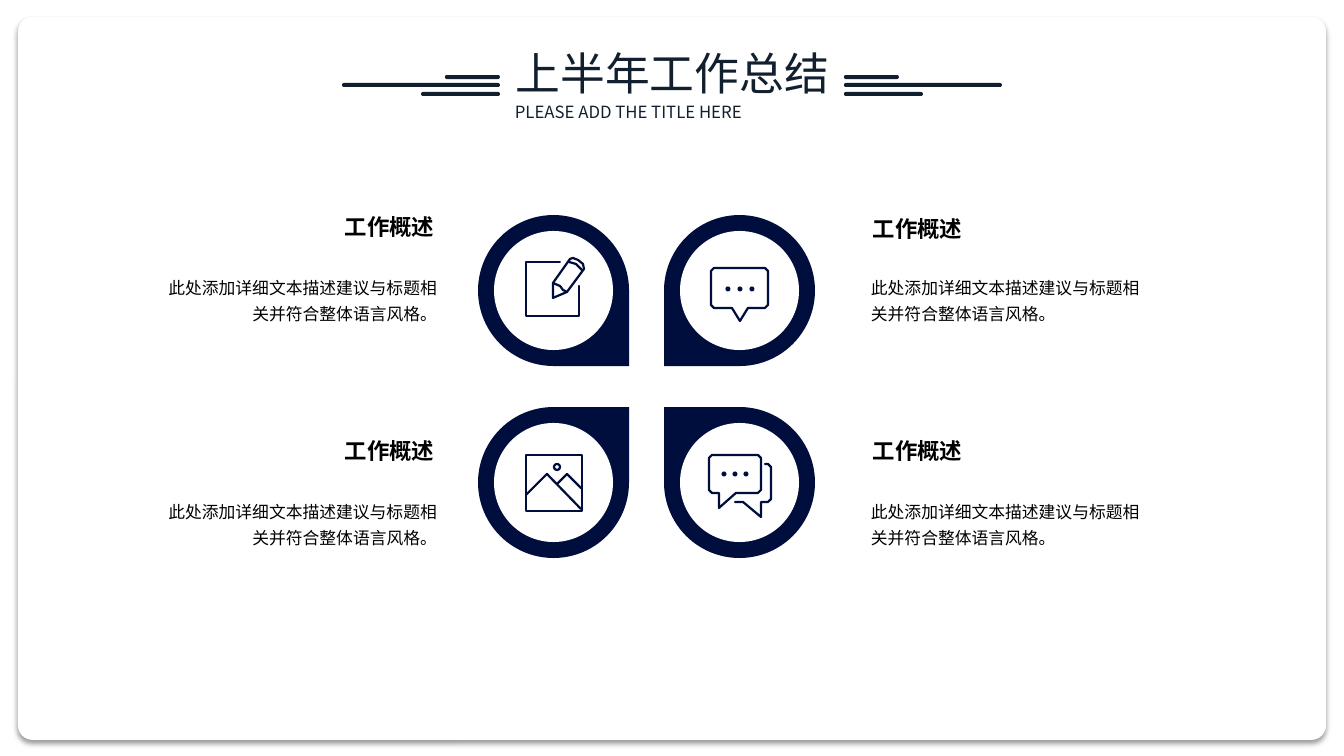
from dataclasses import dataclass

from lxml import etree
from pptx import Presentation
from pptx.dml.color import RGBColor
from pptx.enum.shapes import MSO_SHAPE
from pptx.enum.text import MSO_ANCHOR, MSO_AUTO_SIZE, PP_ALIGN
from pptx.oxml.ns import qn
from pptx.util import Emu, Pt

EMU_PER_PX = 914400 / 100.8
FONT = "Noto Sans CJK SC"
NAVY, INK, WHITE, BLACK = "000E3D", "121F2F", "FFFFFF", "000000"
LEFT, RIGHT, CENTER = PP_ALIGN.LEFT, PP_ALIGN.RIGHT, PP_ALIGN.CENTER
JUSTIFY = PP_ALIGN.JUSTIFY
TOP = MSO_ANCHOR.TOP
FIT_SHAPE = MSO_AUTO_SIZE.SHAPE_TO_FIT_TEXT
OVAL, TEAR, ROUNDED = MSO_SHAPE.OVAL, MSO_SHAPE.TEAR, MSO_SHAPE.ROUNDED_RECTANGLE

HEADING = "工作概述"
DETAIL = "此处添加详细文本描述建议与标题相关并符合整体语言风格。"
BADGE_SIZE, RING_WIDTH = 151, 16
DOT_SIZE = 5
BAR_HEIGHT = 4

Point = tuple[int, int]


@dataclass
class Stroke:
    points: list[Point]
    closed: bool = False


@dataclass
class Icon:
    strokes: list[Stroke]
    dots: list[Point]
    rings: list[Point]


@dataclass
class Topic:
    badge: Point
    rotation: int
    icon: Icon
    heading: Point
    detail: Point
    align: PP_ALIGN


@dataclass
class Bar:
    top: int
    length: int


def px(value: float) -> Emu:
    return Emu(round(value * EMU_PER_PX))


def color(value: str) -> RGBColor:
    return RGBColor.from_string(value)


def add_filled(shapes, kind, left: int, top: int, width: int, height: int, fill: str):
    shape = shapes.add_shape(kind, px(left), px(top), px(width), px(height))
    shape.shadow.inherit = False
    shape.fill.solid()
    shape.fill.fore_color.rgb = color(fill)
    shape.line.fill.background()
    return shape


def outline(shape) -> None:
    """Give an icon part a thin line with round ends and joins, and no fill."""
    shape.shadow.inherit = False
    shape.fill.background()
    shape.line.color.rgb = color(NAVY)
    shape.line.width = Pt(1.6)
    line = shape.element.spPr.find(qn("a:ln"))
    line.set("cap", "rnd")
    etree.SubElement(line, qn("a:round"))


def bubble(left: int, top: int, right: int, bottom: int, tail: list[Point]) -> Stroke:
    """Speech bubble with cut corners; the tail runs from right to left."""
    cut = 3
    return Stroke([
        (left + cut, top), (right - cut, top), (right, top + cut),
        (right, bottom - cut), (right - cut, bottom), *tail,
        (left + cut, bottom), (left, bottom - cut), (left, top + cut),
    ], closed=True)


def add_icon(shapes, icon: Icon) -> None:
    for stroke in icon.strokes:
        first, *rest = [(px(x), px(y)) for x, y in stroke.points]
        builder = shapes.build_freeform(*first)
        builder.add_line_segments(rest, close=stroke.closed)
        outline(builder.convert_to_shape())
    half = DOT_SIZE / 2
    for x, y in icon.dots:
        add_filled(shapes, OVAL, x - half, y - half, DOT_SIZE, DOT_SIZE, NAVY)
    for x, y in icon.rings:
        outline(shapes.add_shape(OVAL, px(x - 3), px(y - 3), px(6), px(6)))


def write(shape, text: str, size: int, ink: str, align, bold=False, spacing=1.0, wrap=True):
    frame = shape.text_frame
    frame_format = {"word_wrap": wrap, "auto_size": FIT_SHAPE, "vertical_anchor": TOP}
    for name, value in frame_format.items():
        setattr(frame, name, value)
    paragraph = frame.paragraphs[0]
    paragraph.alignment = align
    paragraph.line_spacing = spacing
    run = paragraph.add_run()
    run.text = text
    run.font.color.rgb = color(ink)
    for name, value in {"name": FONT, "size": Pt(size), "bold": bold}.items():
        setattr(run.font, name, value)
    latin = run.font._element.find(qn("a:latin"))
    east_asian = etree.Element(qn("a:ea"), typeface=FONT)
    latin.addnext(east_asian)


def add_text(slide, position: Point, width: int, height: int, text: str, **text_format):
    left, top = position
    box = slide.shapes.add_textbox(px(left), px(top), px(width), px(height))
    write(box, text, **text_format)


def add_panel(slide) -> None:
    panel = add_filled(slide.shapes, ROUNDED, 18, 17, 1308, 723, WHITE)
    panel.adjustments[0] = 0.02
    effects = panel.element.spPr.find(qn("a:effectLst"))
    shadow = etree.SubElement(effects, qn("a:outerShdw"), blurRad=str(Pt(4)),
                              dist=str(Pt(3)), dir="5400000", algn="t", rotWithShape="0")
    shade = etree.SubElement(shadow, qn("a:srgbClr"), val=BLACK)
    etree.SubElement(shade, qn("a:alpha"), val="40000")
    slide.shapes.title.element.addprevious(panel.element)


def add_title(slide) -> None:
    title = slide.shapes.title
    frame = {"left": 501, "top": 41, "width": 343, "height": 65}
    for name, value in frame.items():
        setattr(title, name, px(value))
    write(title, "上半年工作总结", size=32, ink=INK, align=CENTER)
    add_text(slide, (505, 97), 334, 30, "PLEASE ADD THE TITLE HERE",
             size=12, ink=INK, align=JUSTIFY)
    for bar in (Bar(83, 158), Bar(75, 55), Bar(92, 79)):
        for left in (500 - bar.length, 844):
            shape = add_filled(slide.shapes, ROUNDED, left, bar.top, bar.length, BAR_HEIGHT, INK)
            shape.adjustments[0] = 0.5


def add_topic(slide, topic: Topic) -> None:
    left, top = topic.badge
    shapes = slide.shapes.add_group_shape().shapes
    drop = add_filled(shapes, TEAR, left, top, BADGE_SIZE, BADGE_SIZE, NAVY)
    drop.rotation = topic.rotation
    inner = BADGE_SIZE - 2 * RING_WIDTH
    add_filled(shapes, OVAL, left + RING_WIDTH, top + RING_WIDTH, inner, inner, WHITE)
    add_icon(shapes, topic.icon)
    add_text(slide, topic.heading, 111, 37, HEADING,
             size=16, ink=BLACK, align=RIGHT, bold=True, wrap=False)
    add_text(slide, topic.detail, 291, 64, DETAIL,
             size=12, ink=BLACK, align=topic.align, spacing=1.3)


NOTE = Icon([
    Stroke([(560, 262), (526, 262), (526, 316), (579, 316), (579, 286)]),
    Stroke([(553, 298), (553, 283), (570, 259), (573, 258), (578, 260),
            (583, 264), (584, 269), (567, 292)], closed=True),
    Stroke([(569, 262), (576, 264), (582, 270)]),
    Stroke([(553, 283), (560, 286), (563, 290), (567, 292)]),
], [], [])
CHAT = Icon([bubble(711, 268, 768, 308, [(748, 308), (740, 321), (732, 308)])],
            [(x, 289) for x in (728, 740, 752)], [])
PHOTO = Icon([
    Stroke([(526, 455), (582, 455), (582, 511), (526, 511)], closed=True),
    Stroke([(526, 495), (547, 474), (581, 509)]),
    Stroke([(557, 484), (567, 474), (581, 488)]),
], [], [(557, 467)])
DIALOGUE = Icon([
    bubble(709, 455, 761, 493, [(736, 493), (719, 508), (719, 493)]),
    Stroke([(765, 464), (768, 464), (771, 467), (771, 499), (768, 502),
            (761, 502), (761, 517), (743, 502), (735, 502)]),
], [(x, 474) for x in (724, 735, 746)], [])

TOPICS = [
    Topic((478, 215), 90, NOTE, (333, 208), (156, 267), RIGHT),
    Topic((664, 215), 180, CHAT, (861, 210), (861, 267), LEFT),
    Topic((478, 407), 0, PHOTO, (333, 432), (156, 491), RIGHT),
    Topic((664, 407), 270, DIALOGUE, (861, 432), (861, 491), LEFT),
]


def main() -> None:
    presentation = Presentation()
    presentation.slide_width, presentation.slide_height = px(1344), px(756)
    slide = presentation.slides.add_slide(presentation.slide_layouts[5])
    add_panel(slide)
    add_title(slide)
    for topic in TOPICS:
        add_topic(slide, topic)
    presentation.save("out.pptx")


if __name__ == "__main__":
    main()
